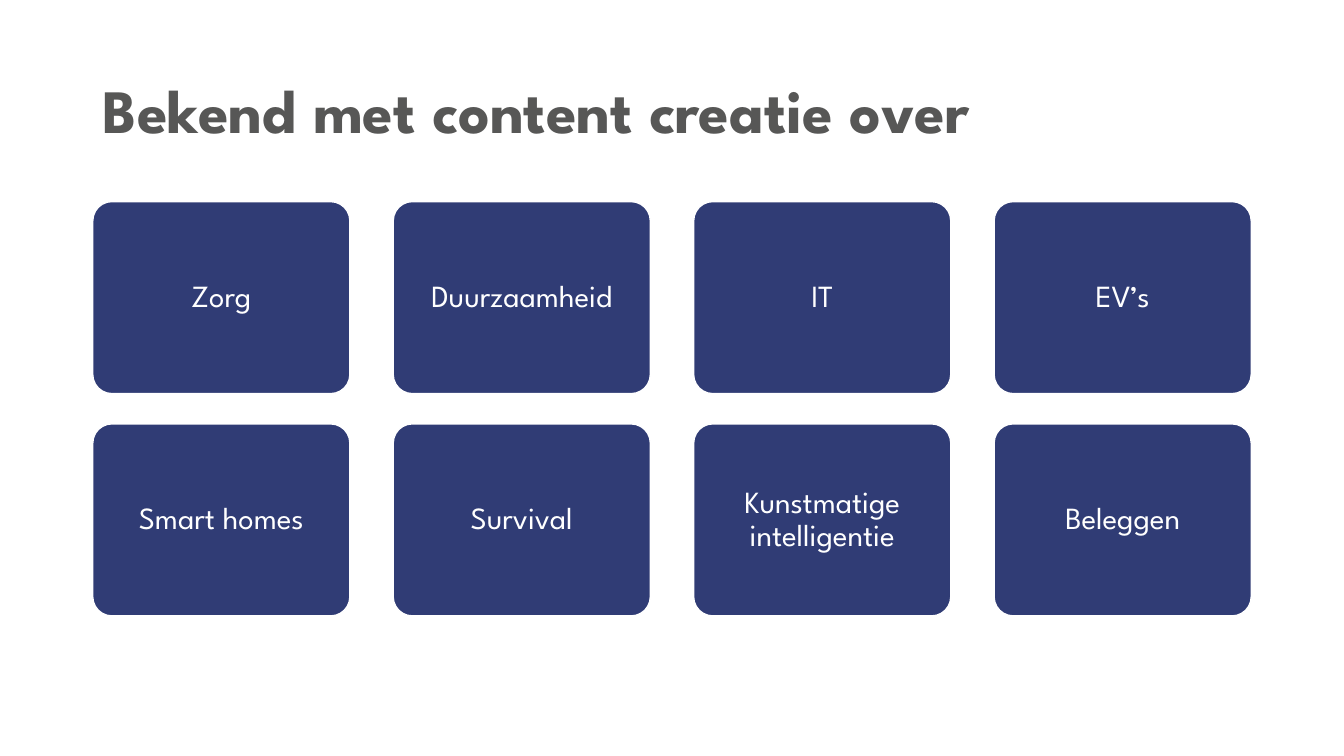
import pptx
import pptx.util
import pptx.dml.color
import pptx.enum.shapes
import pptx.enum.text
from dataclasses import dataclass

Inches = pptx.util.Inches
Pt = pptx.util.Pt
RGB = pptx.dml.color.RGBColor
Align = pptx.enum.text.PP_ALIGN
Anchor = pptx.enum.text.MSO_ANCHOR


@dataclass(frozen=True)
class Theme:
    font: str = "League Spartan"
    grey: RGB = RGB(0x57, 0x57, 0x56)
    navy: RGB = RGB(0x30, 0x3C, 0x75)
    white: RGB = RGB(0xFF, 0xFF, 0xFF)
    head: int = 44
    body: int = 22


THEME = Theme()
TOPICS = [
    ["Zorg", "Duurzaamheid", "IT", "EV’s"],
    ["Smart homes", "Survival", "Kunstmatige intelligentie", "Beleggen"],
]


def write(frame, text, size, color, align, bold=False):
    frame.word_wrap = True
    frame.auto_size = pptx.enum.text.MSO_AUTO_SIZE.NONE
    frame.vertical_anchor = Anchor.MIDDLE
    para = frame.paragraphs[0]
    para.text = text
    para.alignment = align
    para.line_spacing = 0.9
    para.font.name = THEME.font
    para.font.size = Pt(size)
    para.font.bold = bold
    para.font.color.rgb = color


def add_title(slide, text, left, top, width, height):
    title = slide.shapes.title
    title.left, title.top = Inches(left), Inches(top)
    title.width, title.height = Inches(width), Inches(height)
    write(title.text_frame, text, THEME.head, THEME.grey, Align.LEFT, True)


def add_card(slide, text, left, top, width, height):
    card = slide.shapes.add_shape(
        pptx.enum.shapes.MSO_SHAPE.ROUNDED_RECTANGLE,
        Inches(left), Inches(top), Inches(width), Inches(height))
    card.adjustments[0] = 0.1
    card.shadow.inherit = False
    card.fill.solid()
    card.fill.fore_color.rgb = THEME.navy
    card.line.color.rgb = THEME.white
    card.line.width = Pt(1)
    frame = card.text_frame
    frame.margin_left = frame.margin_right = Inches(0.09)
    frame.margin_top = frame.margin_bottom = Inches(0.09)
    write(frame, text, THEME.body, THEME.white, Align.CENTER)


def add_grid(slide, rows, left, top, width, height):
    # Cards share the box evenly, with fixed gaps between them
    gap_x, gap_y = 0.43, 0.3
    step_x = (width + gap_x) / len(rows[0])
    step_y = (height + gap_y) / len(rows)
    for r, row in enumerate(rows):
        for c, topic in enumerate(row):
            add_card(slide, topic, left + c * step_x, top + r * step_y,
                     step_x - gap_x, step_y - gap_y)


def main():
    deck = pptx.Presentation()
    deck.slide_width, deck.slide_height = Inches(13.33), Inches(7.5)
    slide = deck.slides.add_slide(deck.slide_layouts.get_by_name("Title Only"))

    # Heading
    add_title(slide, "Bekend met content creatie over", 0.92, 0.4, 11.5, 1.45)

    # Topic cards
    add_grid(slide, TOPICS, 0.92, 2, 11.49, 4.11)

    deck.save("out.pptx")


if __name__ == "__main__":
    main()
